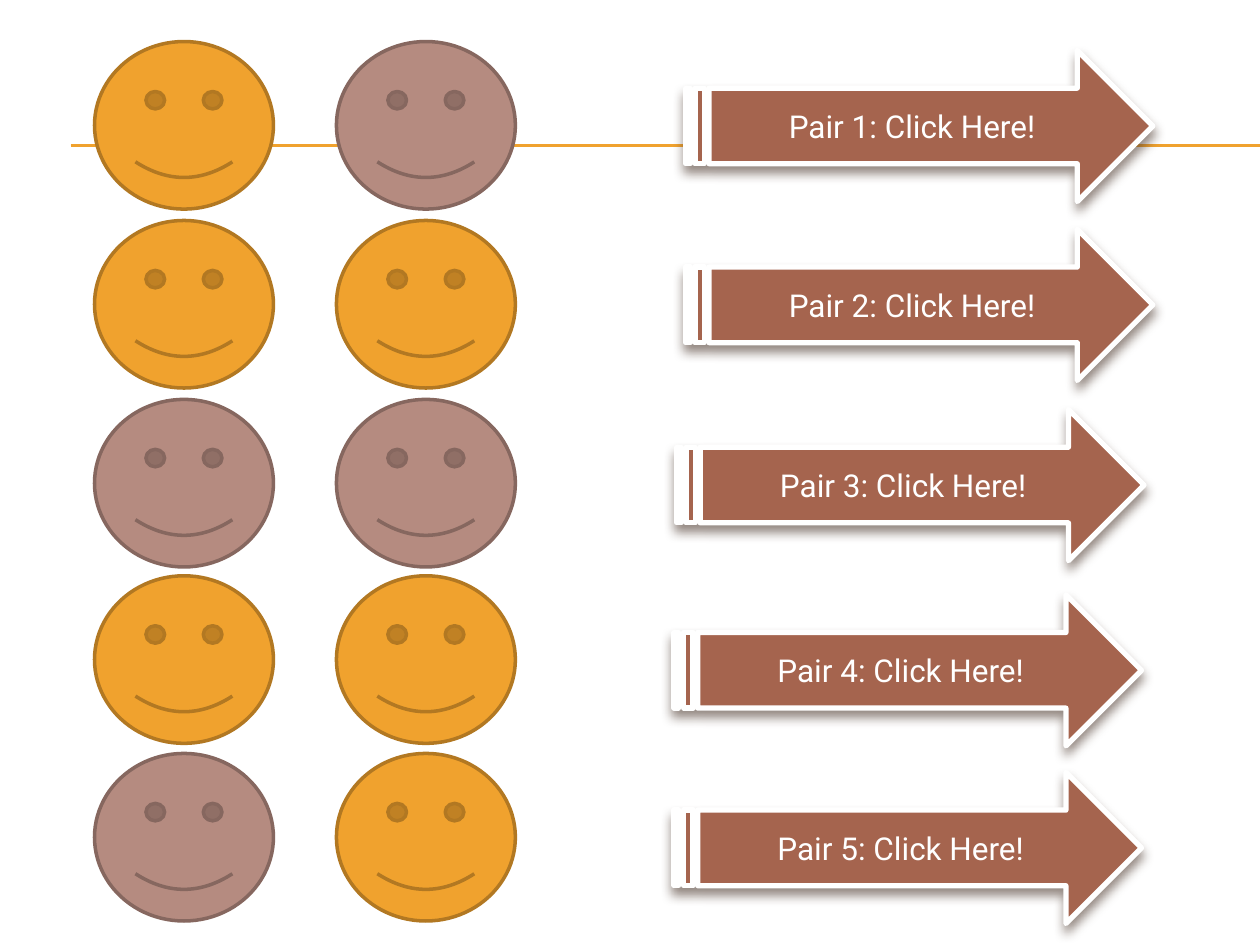
from lxml.etree import SubElement
from pptx import Presentation
from pptx.dml.color import RGBColor
from pptx.enum.shapes import MSO_CONNECTOR as Connector, MSO_SHAPE as Shape
from pptx.enum.text import MSO_ANCHOR as Anchor, PP_ALIGN as Align
from pptx.oxml.ns import qn
from pptx.util import Inches, Pt

ORANGE = RGBColor(0xF0, 0xA2, 0x2E)
DARK_ORANGE = RGBColor(0xB2, 0x78, 0x22)
MAUVE = RGBColor(0xB5, 0x8B, 0x80)
DARK_MAUVE = RGBColor(0x86, 0x67, 0x5F)
BROWN = RGBColor(0xA5, 0x64, 0x4E)
SHADOW = RGBColor(0x4E, 0x3B, 0x30)
WHITE = RGBColor(0xFF, 0xFF, 0xFF)

SUNNY = (ORANGE, DARK_ORANGE)
ROSY = (MAUVE, DARK_MAUVE)
FACE_COLUMNS = (0.75, 2.67)
PAIRS = [
    (0.33, (SUNNY, ROSY), 5.44, 0.40),
    (1.75, (SUNNY, SUNNY), 5.44, 1.82),
    (3.17, (ROSY, ROSY), 5.37, 3.25),
    (4.57, (SUNNY, SUNNY), 5.35, 4.72),
    (5.98, (ROSY, SUNNY), 5.35, 6.13),
]

deck = Presentation()
deck.slide_width, deck.slide_height = Inches(10), Inches(7.5)
slide = deck.slides.add_slide(deck.slide_layouts[6])


def add_figure(preset, left, top, width, height, fill, outline, weight):
    figure = slide.shapes.add_shape(
        preset, Inches(left), Inches(top), Inches(width), Inches(height))
    figure.fill.solid()
    figure.fill.fore_color.rgb = fill
    figure.line.color.rgb = outline
    figure.line.width = Pt(weight)
    figure.shadow.inherit = False
    return figure


for rule_top in (1.15, 1.16):
    rule = slide.shapes.add_connector(
        Connector.STRAIGHT, Inches(0.56), Inches(rule_top), Inches(10), Inches(rule_top))
    rule.line.color.rgb = ORANGE
    rule.line.width = Pt(0.75)
    SubElement(rule._element.spPr, qn("a:effectLst"))

for number, (face_top, moods, arrow_left, arrow_top) in enumerate(PAIRS, start=1):
    for face_left, (skin, outline) in zip(FACE_COLUMNS, moods):
        add_figure(Shape.SMILEY_FACE, face_left, face_top, 1.42, 1.33, skin, outline, 2)

    arrow = add_figure(
        Shape.STRIPED_RIGHT_ARROW, arrow_left, arrow_top, 3.71, 1.2, BROWN, WHITE, 3)
    effects = arrow._element.spPr.find(qn("a:effectLst"))
    drop = SubElement(effects, qn("a:outerShdw"), blurRad=str(Pt(6)), dist=str(Pt(4)),
                      dir=str(90 * 60000), rotWithShape="0")
    tint = SubElement(drop, qn("a:srgbClr"), val=str(SHADOW))
    SubElement(tint, qn("a:alpha"), val="60000")

    arrow.text_frame.vertical_anchor = Anchor.MIDDLE
    label = arrow.text_frame.paragraphs[0]
    label.alignment = Align.CENTER
    invitation = label.add_run()
    invitation.text = f"Pair {number}: Click Here!"
    invitation.font.name = "Roboto"
    invitation.font.size = Pt(18)
    invitation.font.color.rgb = WHITE

deck.save("out.pptx")
